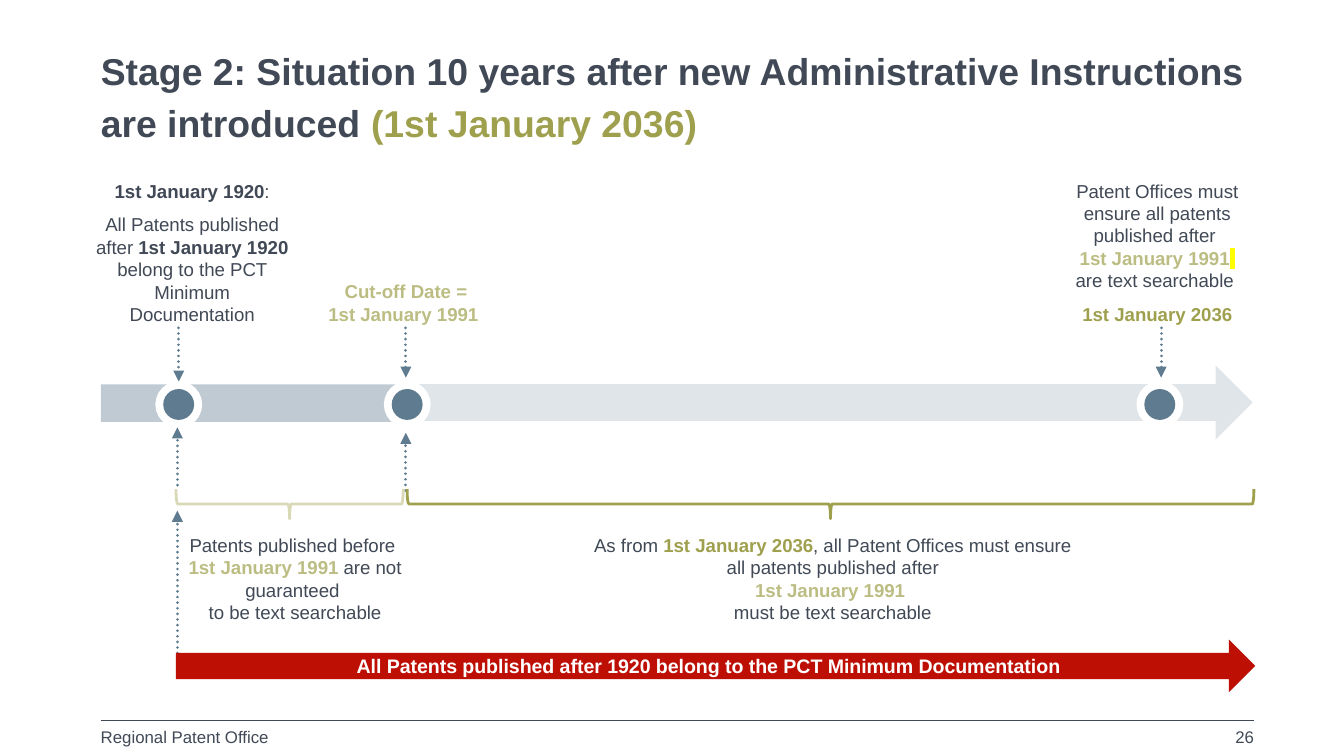
from lxml import etree
from pptx import Presentation
from pptx.dml.color import RGBColor
from pptx.enum import dml, shapes, text
from pptx.oxml import ns
from pptx.util import Inches, Pt

INK = RGBColor(0x40, 0x49, 0x55)
OLIVE = RGBColor(0x9F, 0xA0, 0x4E)
LIGHT_OLIVE = RGBColor(0xBC, 0xBD, 0x83)
PALE_OLIVE = RGBColor(0xD9, 0xD9, 0xB7)
STEEL = RGBColor(0x5F, 0x7B, 0x8F)
PAST = RGBColor(0xC0, 0xCA, 0xD3)
FUTURE = RGBColor(0xE0, 0xE5, 0xE9)
RED = RGBColor(0xBE, 0x0F, 0x05)
WHITE = RGBColor(0xFF, 0xFF, 0xFF)
CENTER = text.PP_ALIGN.CENTER
MIDDLE = text.MSO_ANCHOR.MIDDLE
BOTTOM = text.MSO_ANCHOR.BOTTOM
KIND = shapes.MSO_SHAPE


def strong(words, color=INK, **extra):
    return words, dict(color=color, bold=True, **extra)


def highlight(run, color):
    mark = etree.Element(ns.qn("a:highlight"))
    etree.SubElement(mark, ns.qn("a:srgbClr"), val=color)
    run.font._element.find(ns.qn("a:solidFill")).addnext(mark)


def break_line(paragraph, size):
    paragraph.add_line_break()
    etree.SubElement(paragraph._p[-1], ns.qn("a:rPr"), sz=str(int(size * 100)))


def write(frame, paragraphs, size=10, color=INK, bold=False, align=CENTER,
          anchor=BOTTOM, line=None, gaps=None):
    frame.word_wrap = True
    frame.vertical_anchor = anchor
    for index, parts in enumerate(paragraphs):
        paragraph = frame.paragraphs[0] if index == 0 else frame.add_paragraph()
        paragraph.alignment = align
        if line:
            paragraph.line_spacing = Pt(line)
        if gaps and index in gaps:
            paragraph.space_after = Pt(gaps[index])
        for part in parts:
            if part == "\n":
                break_line(paragraph, size)
                continue
            words, look = part if isinstance(part, tuple) else (part, {})
            run = paragraph.add_run()
            run.text = words
            run.font.name = "Arial"
            run.font.size = Pt(size)
            run.font.bold = look.get("bold", bold)
            run.font.color.rgb = look.get("color", color)
            if "mark" in look:
                highlight(run, look["mark"])


def label(slide, box, paragraphs, bottom=0.02, **look):
    frame = slide.shapes.add_textbox(*map(Inches, box)).text_frame
    frame.margin_left = frame.margin_right = frame.margin_top = 0
    frame.margin_bottom = Inches(bottom)
    write(frame, paragraphs, **look)


def figure(parent, kind, box, fill=None, line=None, width=1.5):
    shape = parent.shapes.add_shape(kind, *map(Inches, box))
    shape.shadow.inherit = False
    if fill is None:
        shape.fill.background()
    else:
        shape.fill.solid()
        shape.fill.fore_color.rgb = fill
    if line is None:
        shape.line.fill.background()
    else:
        shape.line.color.rgb = line
        shape.line.width = Pt(width)
    return shape


def rule(slide, start, end, color, width):
    line = slide.shapes.add_connector(
        shapes.MSO_CONNECTOR.STRAIGHT, *map(Inches, (*start, *end)))
    line.line.color.rgb = color
    line.line.width = Pt(width)
    etree.SubElement(line._element.spPr, ns.qn("a:effectLst"))
    return line


def pointer(slide, start, end):
    line = rule(slide, start, end, STEEL, 1.5).line
    line.dash_style = dml.MSO_LINE.ROUND_DOT
    stroke = line._get_or_add_ln()
    stroke.set("cap", "rnd")
    etree.SubElement(stroke, ns.qn("a:tailEnd"), type="triangle")


def milestone(slide, x, y):
    group = slide.shapes.add_group_shape()
    for size, fill, line in ((0.32, WHITE, WHITE), (0.23, STEEL, None)):
        box = (x - size / 2, y - size / 2, size, size)
        figure(group, KIND.OVAL, box, fill, line, 2)


def brace(slide, left, top, width, height, color):
    box = (left + (width - height) / 2, top + (height - width) / 2, height, width)
    shape = figure(slide, KIND.LEFT_BRACE, box, line=color)
    shape.adjustments[0] = 0.057
    shape.rotation = 270


def header(slide, left, top, width):
    label(slide, (left, top, width, 0.44), [[
        "Stage 2: Situation 10 years after new Administrative Instructions are introduced ",
        strong("(1st January 2036)", OLIVE)]],
        bottom=0, size=20, bold=True, align=text.PP_ALIGN.LEFT,
        anchor=text.MSO_ANCHOR.TOP, line=28)


def timeline(slide, left, top, width):
    middle = top + 0.29
    figure(slide, KIND.RECTANGLE, (left, top + 0.14, 2.28, 0.28), PAST)
    figure(slide, KIND.RIGHT_ARROW, (left + 2.32, top, width - 2.33, 0.55), FUTURE)
    for x, tip in ((1.33, 2.84), (3.02, 2.81), (8.64, 2.81)):
        pointer(slide, (x, top - 0.28), (x, tip))
    for x in (1.33, 3.03, 8.63):
        milestone(slide, x, middle)
    for x, bottom, tip in ((1.32, 3.61, 3.18), (3.02, 3.65, 3.22), (1.32, 4.86, 3.8)):
        pointer(slide, (x, bottom), (x, tip))


def dates(slide, bottom):
    label(slide, (0.7, bottom - 1.11, 1.46, 1.11), [
        [strong("1st January 1920"), ":"],
        ["All Patents published after ", strong("1st January 1920 "),
         "belong to the PCT Minimum Documentation"]], gaps={0: 6})
    label(slide, (2.31, bottom - 0.36, 1.42, 0.36), [
        ["Cut-off Date ="], ["1st January 1991 "]],
        color=LIGHT_OLIVE, bold=True, gaps={1: 6})
    label(slide, (7.9, bottom - 1.11, 1.42, 1.11), [
        ["Patent Offices must ensure all patents published after "],
        [strong("1st January 1991", LIGHT_OLIVE),
         strong(" ", LIGHT_OLIVE, mark="FFFF00")],
        ["are text searchable "],
        [strong("1st January 2036", OLIVE)]], gaps={2: 6})


def periods(slide, top):
    brace(slide, 1.31, top, 1.69, 0.22, PALE_OLIVE)
    brace(slide, 3.03, top, 6.3, 0.22, OLIVE)
    label(slide, (1.38, top + 0.33, 1.63, 0.69), [
        ["Patents published before "],
        [strong("1st January 1991 ", LIGHT_OLIVE), "are not guaranteed ", "\n",
         "to be text searchable"]])
    label(slide, (3.44, top + 0.33, 5.51, 0.69), [
        ["As from ", strong("1st January 2036", OLIVE),
         ", all Patent Offices must ensure"],
        [" all patents published after "],
        [strong("1st January 1991 ", LIGHT_OLIVE)],
        ["must be text searchable"]])


def summary(slide, box):
    arrow = figure(slide, KIND.RIGHT_ARROW, box, RED)
    write(arrow.text_frame,
          [["All Patents published after 1920 belong to the PCT Minimum Documentation"]],
          size=10.5, color=WHITE, bold=True, anchor=MIDDLE)


def footer(slide, left, top, width):
    rule(slide, (left, top), (left + width, top), INK, 0.75)
    for words, x, span, align in (
            ("Regional Patent Office", left, 1.7, text.PP_ALIGN.LEFT),
            ("26", left + width - 2.33, 2.33, text.PP_ALIGN.RIGHT)):
        label(slide, (x, top + 0.05, span, 0.19), [[words]], bottom=0,
              size=9, align=align, anchor=text.MSO_ANCHOR.TOP)


def main():
    deck = Presentation()
    deck.slide_width = Inches(10)
    deck.slide_height = deck.slide_width * 9 // 16
    slide = deck.slides.add_slide(deck.slide_layouts[6])
    left, width = 0.75, 8.58
    header(slide, left, 0.3, width)
    timeline(slide, left, 2.72, width)
    dates(slide, 2.44)
    periods(slide, 3.64)
    summary(slide, (1.31, 4.76, 8.03, 0.39))
    footer(slide, left, 5.36, width)
    deck.save("out.pptx")


if __name__ == "__main__":
    main()
